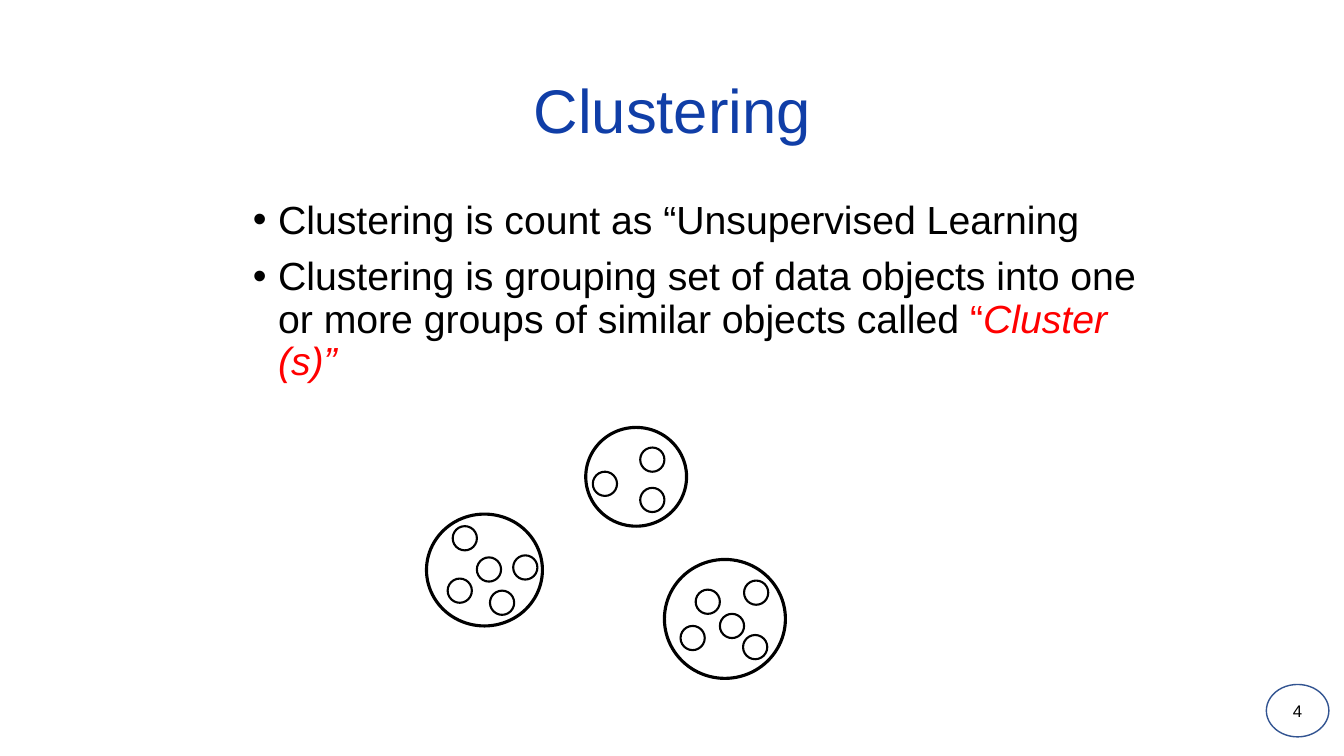
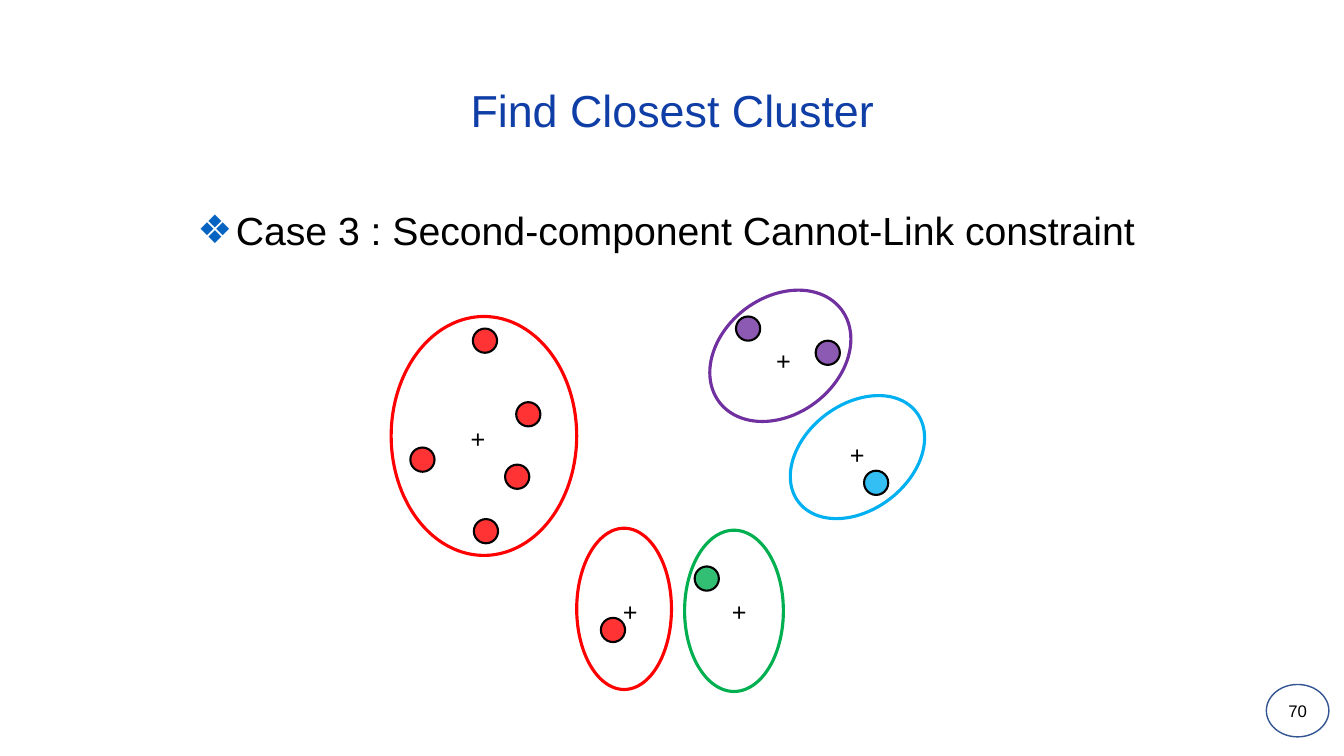
from lxml.etree import SubElement
from pptx import Presentation
from pptx.dml.color import RGBColor
from pptx.enum.shapes import MSO_SHAPE
from pptx.enum.text import MSO_ANCHOR, PP_ALIGN
from pptx.oxml.ns import qn
from pptx.util import Inches, Pt

WHITE = RGBColor(0xFF, 0xFF, 0xFF)
BLACK = RGBColor(0x00, 0x00, 0x00)
TITLE_BLUE = RGBColor(0x10, 0x3E, 0xA7)
BADGE_BLUE = RGBColor(0x32, 0x54, 0x91)
BULLET_BLUE = RGBColor(0x05, 0x63, 0xC1)
RED = RGBColor(0xFF, 0x00, 0x00)
PURPLE = RGBColor(0x70, 0x30, 0xA0)
SKY = RGBColor(0x00, 0xB0, 0xF0)
GREEN = RGBColor(0x00, 0xB0, 0x50)

FONT = "Arial"
OPACITY = 80
POINT_SIZE = 0.24
TILT = -37.2

PLAIN_CLUSTERS = [
    ((6.59, 5.55, 1.2, 1.18),
     [(6.75, 6.21), (6.9, 5.85), (7.37, 6.3), (7.38, 5.76), (7.14, 6.09)]),
    ((5.81, 4.24, 1, 0.98), [(6.35, 4.84), (5.88, 4.68), (6.35, 4.44)]),
    ((4.23, 5.1, 1.15, 1.11),
     [(4.49, 5.22), (4.44, 5.74), (5.09, 5.51), (4.86, 5.86), (4.73, 5.53)]),
]
COLOURED_CLUSTERS = [
    (GREEN, (6.48, 5.57, 1.6, 0.98), -90, (7.16, 5.87), [(6.89, 5.62)]),
    (SKY, (7.77, 4.01, 1.47, 1.05), TILT, (8.33, 4.31), [(8.57, 4.67)]),
    (PURPLE, (6.98, 2.95, 1.52, 1.16), TILT, (7.6, 3.38),
     [(7.3, 3.14), (8.09, 3.38)]),
    (RED, (3.88, 3.14, 1.84, 2.37), 0, (4.57, 4.15),
     [(4.07, 4.44), (5.12, 3.99), (4.69, 3.26), (4.7, 5.15), (5.01, 4.61)]),
    (RED, (5.39, 5.57, 1.6, 0.94), -90, (6.08, 5.87), [(5.96, 6.13)]),
]


def set_values(target, values):
    """Set every attribute named in a dict of format values."""
    for name, value in values.items():
        setattr(target, name, value)


def add_span(para, text, size, color=BLACK, **extra):
    """Add a run of formatted text to a paragraph."""
    span = para.add_run()
    span.text = text
    set_values(span.font, {"name": FONT, "size": Pt(size), **extra})
    span.font.color.rgb = color


def add_box(page, place, **frame_format):
    """Add a wrapping text box and return its text frame."""
    frame = page.shapes.add_textbox(*map(Inches, place)).text_frame
    set_values(frame, {"word_wrap": True, **frame_format})
    return frame


def add_title(page, text, size):
    """Add the centred blue title."""
    frame = add_box(page, (0.92, 0.4, 11.5, 1.45),
                    vertical_anchor=MSO_ANCHOR.MIDDLE)
    para = frame.paragraphs[0]
    set_values(para, {"alignment": PP_ALIGN.CENTER, "line_spacing": 0.9})
    add_span(para, text, size, TITLE_BLUE)


def add_bullet(para, symbol, indent, color=BLACK):
    """Give a paragraph a coloured bullet and a hanging indent."""
    properties = para._p.get_or_add_pPr()
    properties.set("marL", str(Inches(indent)))
    properties.set("indent", str(-Inches(indent)))
    bullet_color = SubElement(properties, qn("a:buClr"))
    SubElement(bullet_color, qn("a:srgbClr"), val=str(color))
    SubElement(properties, qn("a:buFont"), typeface=FONT)
    SubElement(properties, qn("a:buChar"), char=symbol)


def add_ellipse(page, place, fill, line, width, opacity=100, rotation=0):
    """Add an outlined ellipse, optionally see-through or rotated."""
    ellipse = page.shapes.add_shape(MSO_SHAPE.OVAL, *map(Inches, place))
    ellipse.shadow.inherit = False
    ellipse.rotation = rotation
    ellipse.fill.solid()
    ellipse.fill.fore_color.rgb = fill
    set_values(ellipse.line, {"width": Pt(width)})
    ellipse.line.color.rgb = line
    if opacity < 100:
        color = ellipse.element.spPr.find(qn("a:solidFill")).find(qn("a:srgbClr"))
        SubElement(color, qn("a:alpha"), val=str(opacity * 1000))
    return ellipse


def add_cluster(page, place, line=BLACK, rotation=0):
    """Add the outline of a cluster."""
    add_ellipse(page, place, WHITE, line, 2.25, OPACITY, rotation)


def add_points(page, positions, fill=WHITE):
    """Add the data points of a cluster."""
    for left, top in positions:
        place = (left, top, POINT_SIZE, POINT_SIZE)
        add_ellipse(page, place, fill, BLACK, 1.5, OPACITY)


def add_centroid(page, left, top):
    """Mark the centre of a cluster with a plus sign."""
    frame = add_box(page, (left, top, 0.35, 0.4), word_wrap=False)
    add_span(frame.paragraphs[0], "+", 18)


def add_page(deck, number, title, title_size):
    """Add a blank page with its number badge and title."""
    page = deck.slides.add_slide(deck.slide_layouts[6])
    badge = add_ellipse(page, (12.56, 6.79, 0.62, 0.52), WHITE, BADGE_BLUE, 1)
    frame = badge.text_frame
    set_values(frame, {"vertical_anchor": MSO_ANCHOR.MIDDLE, "word_wrap": False})
    para = frame.paragraphs[0]
    para.alignment = PP_ALIGN.CENTER
    add_span(para, str(number), 12)
    add_title(page, title, title_size)
    return page


def add_clustering_page(deck):
    """Build the page that defines clustering."""
    page = add_page(deck, 4, "Clustering", 44)
    frame = add_box(page, (2.41, 1.94, 9, 2.06))
    first, second = frame.paragraphs[0], frame.add_paragraph()
    for para in (first, second):
        add_bullet(para, "•", 0.25)
        para.line_spacing = 0.9
    second.space_before = Pt(10)
    add_span(first, "Clustering is count as “Unsupervised Learning", 28)
    add_span(second, "Clustering is grouping set of data objects into one "
                     "or more groups of similar objects called ", 28)
    add_span(second, "“", 28, RED)
    add_span(second, "Cluster (s)”", 28, RED, italic=True)
    for place, positions in PLAIN_CLUSTERS:
        add_cluster(page, place)
        add_points(page, positions)


def add_closest_page(deck):
    """Build the page that shows the closest cluster case."""
    page = add_page(deck, 70, "Find Closest Cluster", 32)
    for color, place, rotation, centroid, positions in COLOURED_CLUSTERS:
        add_cluster(page, place, color, rotation)
        add_centroid(page, *centroid)
        add_points(page, positions, color)
    para = add_box(page, (1.86, 2, 9.69, 0.76)).paragraphs[0]
    add_bullet(para, "❖", 0.38, BULLET_BLUE)
    add_span(para, "Case 3 : Second-component Cannot-Link constraint", 28)


def main():
    """Build and save the deck."""
    deck = Presentation()
    set_values(deck, {"slide_width": Inches(13.33), "slide_height": Inches(7.5)})
    add_clustering_page(deck)
    add_closest_page(deck)
    deck.save("out.pptx")


if __name__ == "__main__":
    main()
